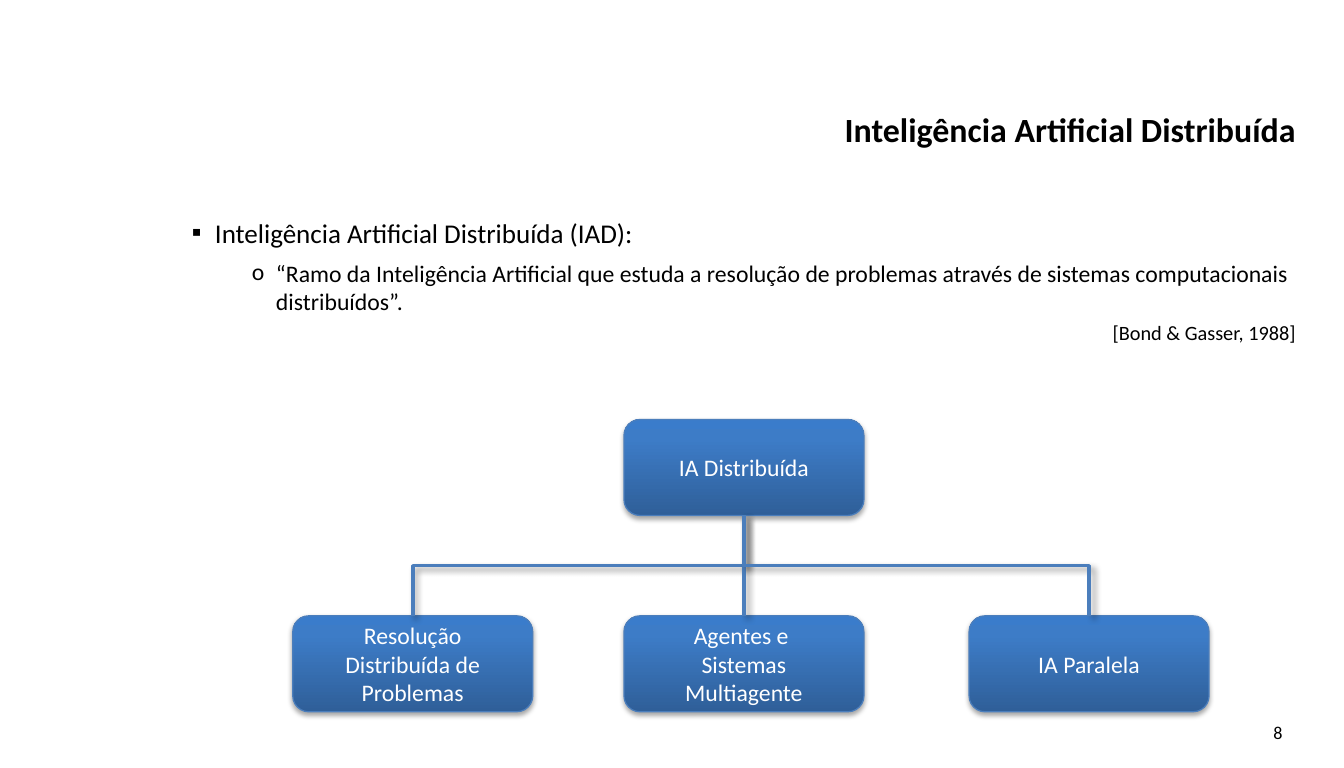
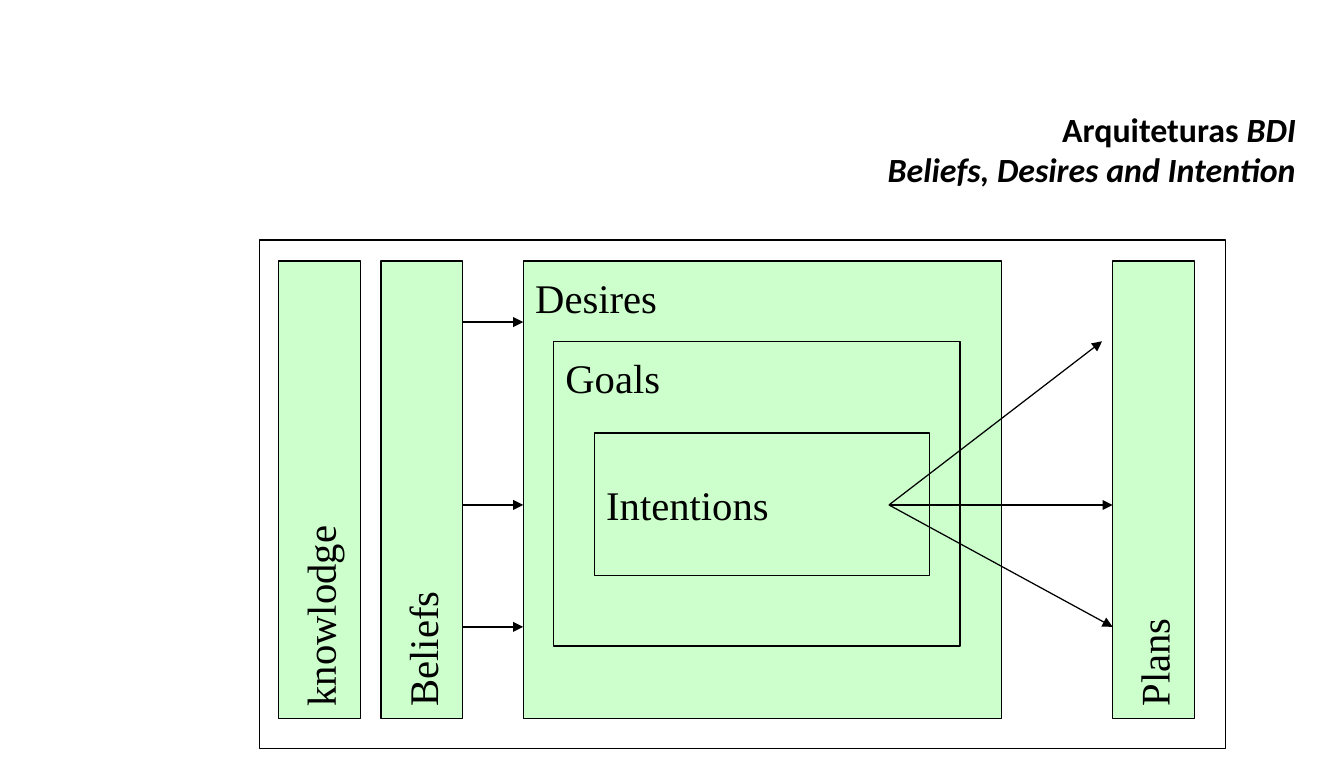
from dataclasses import dataclass
from typing import Any, NamedTuple, Optional

from lxml import etree
from pptx import Presentation
from pptx import util as u
from pptx.dml import color
from pptx.enum import shapes, text
from pptx.oxml import ns


class Shadow(NamedTuple):
    blur: float
    distance: float
    angle: int
    opacity: int


@dataclass(frozen=True)
class Theme:
    ink: str = "000000"
    paper: str = "FFFFFF"
    blue: str = "4B7EBC"
    mint: str = "CCFFCC"
    gradient: tuple = ((0, "2F5F99"), (80, "3D7CC7"), (100, "3A7CCB"))
    sans: str = "Calibri"
    serif: str = "Times New Roman"
    title: float = 20
    lead: float = 16
    detail: float = 14
    citation: float = 12
    number: float = 10.7
    block: float = 24
    thin: float = 0.75
    thick: float = 2
    node_shadow: Shadow = Shadow(3.1, 1.8, 90, 35)
    branch_shadow: Shadow = Shadow(4, 3, 45, 40)


class Box(NamedTuple):
    left: float
    top: float
    width: float
    height: float

    def lengths(self) -> list:
        return [u.Cm(side) for side in self]


class Point(NamedTuple):
    x: float
    y: float


class Segment(NamedTuple):
    words: str
    italic: bool = False


class Statement(NamedTuple):
    words: str
    size: float
    level: int
    margin: float
    hanging: float
    after: float
    bullet: Optional[str] = None
    align: Any = text.PP_ALIGN.LEFT


class Block(NamedTuple):
    label: str
    box: Box
    anchor: Any = text.MSO_ANCHOR.MIDDLE
    upward: bool = False


THEME = Theme()
TITLE = Box(4, 2.26, 23, 2)
BODY = Box(4, 4.5, 23, 10.5)
NUMBER = Box(20.47, 14.83, 6.53, 0.86)
NODE_WIDTH, NODE_HEIGHT = 5, 2
ROOT = Point(13, 8.74)
CHILD_TOP = 12.83
CHILDREN = (
    ("Resolução Distribuída de Problemas", 6.1),
    ("Agentes e \vSistemas Multiagente", ROOT.x),
    ("IA Paralela", 20.19),
)
STATEMENTS = (
    Statement("Inteligência Artificial Distribuída (IAD):",
              THEME.lead, 0, 0.48, -0.48, 6, "▪"),
    Statement("“Ramo da Inteligência Artificial que estuda a resolução de problemas "
              "através de sistemas computacionais distribuídos”.",
              THEME.detail, 1, 1.75, -0.5, 3, "o"),
    Statement("[Bond & Gasser, 1988]", THEME.citation, 3, 5, 0, 3,
              align=text.PP_ALIGN.RIGHT),
)
COLUMN_TOP, COLUMN_WIDTH, COLUMN_HEIGHT = 5.44, 1.7, 9.53
BELIEFS_LEFT, DESIRES_LEFT, PLANS_LEFT = 7.94, 10.9, 23.18
FRAME = Box(5.41, 5, 20.12, 10.59)
COLUMNS = (("knowlodge", 5.81), ("Beliefs", BELIEFS_LEFT), ("Plans", PLANS_LEFT))
NESTED = (
    Block("Desires", Box(DESIRES_LEFT, COLUMN_TOP, 9.96, COLUMN_HEIGHT),
          text.MSO_ANCHOR.TOP),
    Block("Goals", Box(11.53, 7.11, 8.47, 6.35), text.MSO_ANCHOR.TOP),
    Block("Intentions", Box(12.38, 9.02, 6.99, 2.97)),
)
BELIEF_LEVELS = (6.71, 10.52, 13.06)
INTENTION = Point(18.52, 10.52)
PLAN_POINTS = (Point(22.96, 7.11), Point(PLANS_LEFT, 10.52), Point(PLANS_LEFT, 13.06))


def rgb(code: str) -> color.RGBColor:
    return color.RGBColor.from_string(code)


def child(parent: Any, tag: str, **attributes: Any) -> Any:
    values = {key: str(value) for key, value in attributes.items()}
    return etree.SubElement(parent, ns.qn(tag), values)


def style_runs(paragraph: Any, size: float, font: str = THEME.sans,
               ink: str = THEME.ink, bold: bool = False) -> None:
    for run in paragraph.runs:
        run.font.size = u.Pt(size)
        run.font.name = font
        run.font.color.rgb = rgb(ink)
        run.font.bold = bold


def style_line(line: Any, ink: str, width: float) -> None:
    line.color.rgb = rgb(ink)
    line.width = u.Pt(width)


def cast_shadow(effects: Any, shadow: Shadow) -> None:
    outer = child(effects, "a:outerShdw", blurRad=u.Pt(shadow.blur),
                  dist=u.Pt(shadow.distance), dir=shadow.angle * 60000,
                  rotWithShape=0)
    shade = child(outer, "a:srgbClr", val=THEME.ink)
    child(shade, "a:alpha", val=shadow.opacity * 1000)


def add_text_area(slide: Any, box: Box) -> Any:
    frame = slide.shapes.add_textbox(*box.lengths()).text_frame
    frame.word_wrap = True
    frame.margin_left = frame.margin_right = 0
    frame.margin_top = frame.margin_bottom = 0
    return frame


def add_title(slide: Any, *lines: tuple[Segment, ...]) -> None:
    heading = add_text_area(slide, TITLE).paragraphs[0]
    heading.alignment = text.PP_ALIGN.RIGHT
    for index, line in enumerate(lines):
        if index:
            heading.add_line_break()
        for segment in line:
            run = heading.add_run()
            run.text = segment.words
            run.font.italic = segment.italic
    style_runs(heading, THEME.title, bold=True)


def add_number(slide: Any, number: str) -> None:
    frame = add_text_area(slide, NUMBER)
    frame.vertical_anchor = text.MSO_ANCHOR.MIDDLE
    frame.margin_right = u.Cm(0.28)
    frame.text = number
    frame.paragraphs[0].alignment = text.PP_ALIGN.RIGHT
    style_runs(frame.paragraphs[0], THEME.number)


def add_body(slide: Any, statements: tuple[Statement, ...]) -> None:
    frame = add_text_area(slide, BODY)
    frame.text = "\n".join(statement.words for statement in statements)
    for paragraph, statement in zip(frame.paragraphs, statements):
        paragraph.level = statement.level
        paragraph.alignment = statement.align
        paragraph.space_after = u.Pt(statement.after)
        style_runs(paragraph, statement.size)
        properties = paragraph._p.get_or_add_pPr()
        properties.set("marL", str(u.Cm(statement.margin)))
        properties.set("indent", str(u.Cm(statement.hanging)))
        if statement.bullet:
            child(properties, "a:buFont", typeface=THEME.sans)
            child(properties, "a:buChar", char=statement.bullet)


def add_node(slide: Any, label: str, corner: Point) -> Any:
    box = Box(*corner, NODE_WIDTH, NODE_HEIGHT)
    node = slide.shapes.add_shape(shapes.MSO_SHAPE.ROUNDED_RECTANGLE, *box.lengths())
    properties = node.element.spPr
    gradient = child(properties, "a:gradFill", rotWithShape=1)
    stops = child(gradient, "a:gsLst")
    for position, tint in THEME.gradient:
        child(child(stops, "a:gs", pos=position * 1000), "a:srgbClr", val=tint)
    child(gradient, "a:lin", ang=270 * 60000, scaled=0)
    style_line(node.line, THEME.blue, THEME.thin)
    node.shadow.inherit = False
    cast_shadow(properties.find(ns.qn("a:effectLst")), THEME.node_shadow)
    frame = node.text_frame
    frame.word_wrap = True
    frame.vertical_anchor = text.MSO_ANCHOR.MIDDLE
    frame.text = label
    frame.paragraphs[0].alignment = text.PP_ALIGN.CENTER
    style_runs(frame.paragraphs[0], THEME.detail, ink=THEME.paper)
    return node


def add_link(slide: Any, kind: Any, start: Point, end: Point,
             ink: str, width: float) -> tuple[Any, Any]:
    ends = [u.Cm(length) for length in (*start, *end)]
    link = slide.shapes.add_connector(kind, *ends)
    style_line(link.line, ink, width)
    return link, child(link.element.spPr, "a:effectLst")


def add_branch(slide: Any, parent: Any, offspring: Any,
               start: Point, end: Point) -> None:
    straight = start.x == end.x
    kind = shapes.MSO_CONNECTOR.STRAIGHT if straight else shapes.MSO_CONNECTOR.ELBOW
    branch, effects = add_link(slide, kind, start, end, THEME.blue, THEME.thick)
    cast_shadow(effects, THEME.branch_shadow)
    branch.begin_connect(parent, 2)
    branch.end_connect(offspring, 0)
    if straight:
        return
    span, drop = abs(end.x - start.x), end.y - start.y
    middle = Point((start.x + end.x) / 2, (start.y + end.y) / 2)
    turned = Box(middle.x - drop / 2, middle.y - span / 2, drop, span)
    branch.left, branch.top, branch.width, branch.height = turned.lengths()
    rightward = end.x > start.x
    transform = branch.element.spPr.xfrm
    transform.flipH = rightward
    transform.rot = 270 if rightward else 90


def add_arrow(slide: Any, start: Point, end: Point) -> None:
    arrow, _ = add_link(slide, shapes.MSO_CONNECTOR.STRAIGHT, start, end,
                        THEME.ink, THEME.thin)
    child(arrow.line._get_or_add_ln(), "a:tailEnd", type="triangle")


def add_rectangle(slide: Any, box: Box, tint: Optional[str] = None) -> Any:
    rectangle = slide.shapes.add_shape(shapes.MSO_SHAPE.RECTANGLE, *box.lengths())
    rectangle.shadow.inherit = False
    style_line(rectangle.line, THEME.ink, THEME.thin)
    if tint:
        rectangle.fill.solid()
        rectangle.fill.fore_color.rgb = rgb(tint)
    else:
        rectangle.fill.background()
    return rectangle


def add_block(slide: Any, block: Block) -> None:
    frame = add_rectangle(slide, block.box, THEME.mint).text_frame
    frame.word_wrap = True
    frame.vertical_anchor = block.anchor
    frame.margin_top = frame.margin_bottom = u.Cm(0.25)
    if block.upward:
        frame._txBody.bodyPr.set("vert", "vert270")
    frame.text = block.label
    frame.paragraphs[0].alignment = text.PP_ALIGN.LEFT
    style_runs(frame.paragraphs[0], THEME.block, THEME.serif)


def build_distributed_ai(slide: Any) -> None:
    add_title(slide, (Segment("Inteligência Artificial Distribuída"),))
    add_number(slide, "8")
    add_body(slide, STATEMENTS)
    root = add_node(slide, "IA Distribuída", ROOT)
    start = Point(ROOT.x + NODE_WIDTH / 2, ROOT.y + NODE_HEIGHT)
    for label, left in CHILDREN:
        field = add_node(slide, label, Point(left, CHILD_TOP))
        add_branch(slide, root, field, start, Point(left + NODE_WIDTH / 2, CHILD_TOP))


def build_bdi(slide: Any) -> None:
    add_title(slide, (Segment("Arquiteturas "), Segment("BDI", True)),
              (Segment("Beliefs, Desires and Intention", True),))
    add_rectangle(slide, FRAME)
    for label, left in COLUMNS:
        box = Box(left, COLUMN_TOP, COLUMN_WIDTH, COLUMN_HEIGHT)
        add_block(slide, Block(label, box, upward=True))
    for block in NESTED:
        add_block(slide, block)
    for level in BELIEF_LEVELS:
        add_arrow(slide, Point(BELIEFS_LEFT + COLUMN_WIDTH, level),
                  Point(DESIRES_LEFT, level))
    for target in PLAN_POINTS:
        add_arrow(slide, INTENTION, target)


def main() -> None:
    deck = Presentation()
    deck.slide_width, deck.slide_height = u.Cm(28), u.Cm(16)
    for build in (build_distributed_ai, build_bdi):
        build(deck.slides.add_slide(deck.slide_layouts[6]))
    deck.save("out.pptx")


if __name__ == "__main__":
    main()
